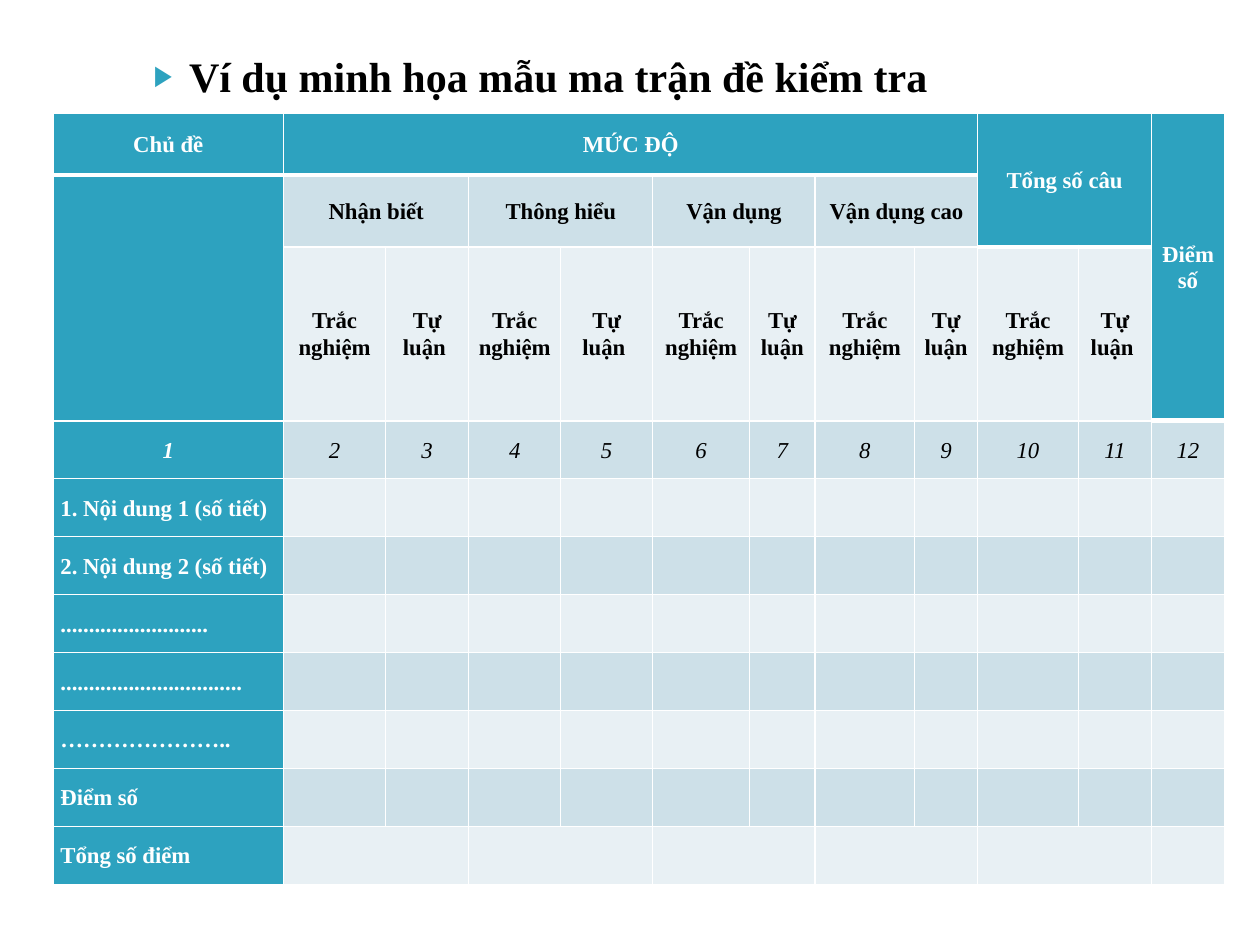
"""Build a slide with a sample test-matrix table."""
from dataclasses import dataclass

from lxml import etree
from pptx import Presentation
from pptx.dml.color import RGBColor
from pptx.enum.text import MSO_ANCHOR, PP_ALIGN
from pptx.oxml.ns import qn
from pptx.util import Inches, Pt

MIDDLE, TOP = MSO_ANCHOR.MIDDLE, MSO_ANCHOR.TOP
CENTER, LEFT = PP_ALIGN.CENTER, PP_ALIGN.LEFT


@dataclass(frozen=True)
class Theme:
    accent: str = "2DA2BF"
    odd_band: str = "CDE0E8"
    even_band: str = "E8F0F4"
    light: str = "FFFFFF"
    dark: str = "000000"
    font: str = "Times New Roman"
    heading_size: int = 24
    table_size: int = 13


THEME = Theme()


def add_border(cell, side, width):
    line = etree.SubElement(cell._tc.get_or_add_tcPr(), qn(f"a:ln{side}"), w=str(Pt(width)))
    fill = etree.SubElement(line, qn("a:solidFill"))
    etree.SubElement(fill, qn("a:srgbClr"), val=THEME.light)


def add_text(paragraph, text, size, color, bold=True, italic=False):
    run = paragraph.add_run()
    run.text = text
    run.font.name = THEME.font
    run.font.size = Pt(size)
    run.font.bold = bold
    run.font.italic = italic
    run.font.color.rgb = RGBColor.from_string(color)


prs = Presentation()
prs.slide_width, prs.slide_height = Inches(10), Inches(7.5)
slide = prs.slides.add_slide(prs.slide_layouts[1])
unused_title = slide.shapes.title.element
unused_title.getparent().remove(unused_title)

heading = slide.placeholders[1]
heading.left, heading.top = Inches(1), Inches(0.3)
heading.width, heading.height = Inches(8.18), Inches(0.5)
heading.text_frame.vertical_anchor = TOP
heading.text_frame.margin_top = Inches(0.1)
heading.text_frame.margin_bottom = 0
heading_line = heading.text_frame.paragraphs[0]
bullet = heading_line._p.get_or_add_pPr()
bullet.set("marL", str(Inches(0.4)))
bullet.set("indent", str(Inches(-0.28)))
bullet_color = etree.SubElement(bullet, qn("a:buClr"))
etree.SubElement(bullet_color, qn("a:srgbClr"), val=THEME.accent)
etree.SubElement(bullet, qn("a:buSzPct"), val="68000")
etree.SubElement(bullet, qn("a:buChar"), char="▶")
heading_line.space_before = Pt(0)
add_text(heading_line, "Ví dụ minh họa mẫu ma trận đề kiểm tra", THEME.heading_size, THEME.dark)

column_widths = [1.83, 0.81, 0.66, 0.73, 0.73, 0.77, 0.52, 0.79, 0.5, 0.8, 0.58, 0.58]
row_heights = [0.49, 0.57, 1.38] + [0.46] * 8
row_count, column_count = len(row_heights), len(column_widths)
pair_starts = range(1, 11, 2)
header_depths = [1] * 9 + [2, 2, 3]

levels = ["Nhận biết", "Thông hiểu", "Vận dụng", "Vận dụng cao"]
topics = ["1. Nội dung 1 (số tiết)", "2. Nội dung 2 (số tiết)", "..........................",
          "................................", "…………………..", "Điểm số", "Tổng số điểm"]
texts = {(0, 0): "Chủ đề", (0, 1): "MỨC ĐỘ", (0, 9): "Tổng số câu", (0, 11): "Điểm số"}
texts.update({(1, column): level for column, level in zip(pair_starts, levels)})
for column in pair_starts:
    texts[2, column] = "Trắc nghiệm"
    texts[2, column + 1] = "Tự luận "
texts.update({(3, column): str(column + 1) for column in range(column_count)})
texts.update({(row, 0): topic for row, topic in enumerate(topics, start=4)})

matrix = slide.shapes.add_table(row_count, column_count, Inches(0.42), Inches(0.9),
                                Inches(sum(column_widths)), Inches(sum(row_heights))).table
matrix.horz_banding = False
for column, width in zip(matrix.columns, column_widths):
    column.width = Inches(width)
for row, height in zip(matrix.rows, row_heights):
    row.height = Inches(height)

spans = [(0, 1, 0, 8), (0, 9, 1, 10), (0, 11, 2, 11), (1, 0, 2, 0)]
spans += [(1, start, 1, start + 1) for start in pair_starts[:4]]
spans += [(row_count - 1, start, row_count - 1, start + 1) for start in pair_starts]
for first_row, first_column, last_row, last_column in spans:
    matrix.cell(first_row, first_column).merge(matrix.cell(last_row, last_column))

for row in range(row_count):
    for column, depth in enumerate(header_depths):
        cell = matrix.cell(row, column)
        add_border(cell, "L", 1)
        add_border(cell, "R", 1)
        add_border(cell, "T", 3 if row == depth else 1)
        add_border(cell, "B", 3 if row in (0, depth - 1) else 1)
        is_heading = column == 0 or row < depth
        band = THEME.odd_band if row % 2 else THEME.even_band
        cell.fill.solid()
        cell.fill.fore_color.rgb = RGBColor.from_string(THEME.accent if is_heading else band)
        cell.vertical_anchor = MIDDLE
        cell.margin_left = cell.margin_right = Inches(0.07 if row == 2 else 0.06)
        cell.margin_top = cell.margin_bottom = 0
        if (row, column) in texts:
            entry = cell.text_frame.paragraphs[0]
            entry.alignment = CENTER if row < 4 else LEFT
            entry.line_spacing = 1.07
            add_text(entry, texts[row, column], THEME.table_size,
                     THEME.light if is_heading else THEME.dark,
                     bold=is_heading or row != 3, italic=row == 3)

prs.save("out.pptx")
